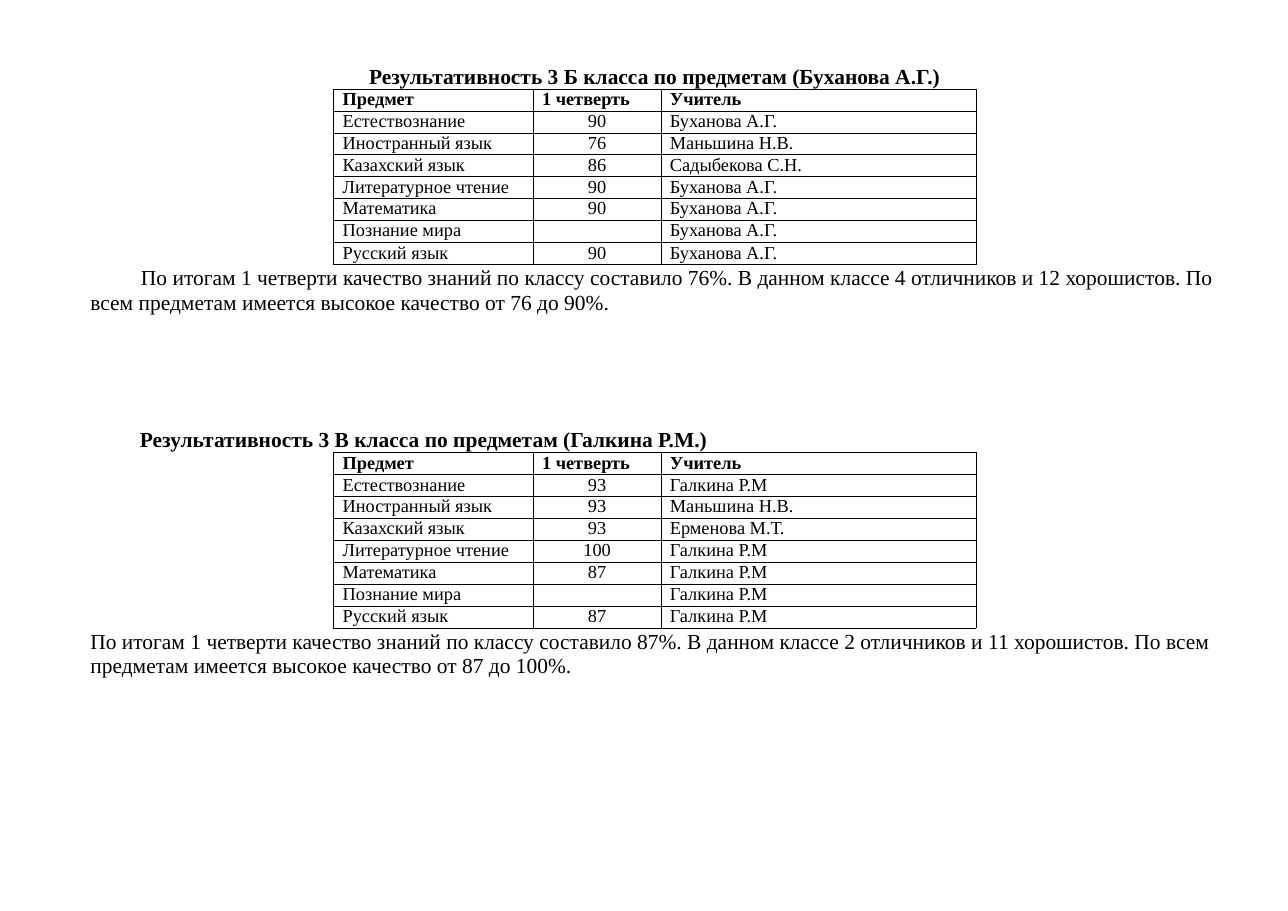
from dataclasses import dataclass

from lxml import etree
from pptx import Presentation
from pptx.dml.color import RGBColor
from pptx.enum.text import MSO_ANCHOR, MSO_AUTO_SIZE, PP_ALIGN
from pptx.oxml.ns import qn
from pptx.util import Inches, Pt

LEFT, CENTER = PP_ALIGN.LEFT, PP_ALIGN.CENTER
TOP, NO_FIT = MSO_ANCHOR.TOP, MSO_AUTO_SIZE.NONE
COLORS = {"text": "000000", "border": "000000", "page": "FFFFFF"}
FONT = "Times New Roman"
BODY_SIZE, TABLE_SIZE = 14, 12
TABLE_LEFT, TABLE_HEIGHT = 3.03, 1.59
COLUMN_WIDTHS = (1.81, 1.16, 2.86)
CELL_INDENT = 0.08
HEADERS = ("Предмет", "1 четверть", "Учитель")
SUBJECTS = ("Естествознание", "Иностранный язык", "Казахский язык",
            "Литературное чтение", "Математика", "Познание мира", "Русский язык")


@dataclass
class ClassReport:
    top: float
    heading: str
    heading_left: float
    scores: tuple[str, ...]
    class_teacher: str
    kazakh_teacher: str
    summary: str
    summary_width: float
    summary_indent: float

    def rows(self) -> list[tuple[str, str, str]]:
        teachers = [self.class_teacher] * len(SUBJECTS)
        teachers[1:3] = ["Маньшина Н.В.", self.kazakh_teacher]
        return [HEADERS, *zip(SUBJECTS, self.scores, teachers)]


REPORTS = (
    ClassReport(
        0.56, "Результативность 3 Б класса по предметам (Буханова А.Г.)", 3.34,
        ("90", "76", "86", "90", "90", "", "90"), "Буханова А.Г.", "Садыбекова С.Н.",
        "По итогам 1 четверти качество знаний по классу составило 76%. "
        "В данном классе 4 отличников и 12 хорошистов. По всем предметам "
        "имеется высокое качество от 76 до 90%.", 10.31, 0.46),
    ClassReport(
        3.86, "Результативность 3 В класса по предметам (Галкина Р.М.)", 1.26,
        ("93", "93", "93", "100", "87", "", "87"), "Галкина Р.М", "Ерменова М.Т.",
        "По итогам 1 четверти качество знаний по классу составило 87%. "
        "В данном классе 2 отличников и 11 хорошистов. По всем предметам "
        "имеется высокое качество от 87 до 100%.", 10.21, 0),
)


def place(sp, left: float, top: float, width: float, height: float) -> None:
    sp.left, sp.top = Inches(left), Inches(top)
    sp.width, sp.height = Inches(width), Inches(height)


def write(tf, text: str, size: float, bold: bool = False, align=LEFT,
          margin: float = 0, indent: float = 0, line: float | None = None,
          before: float = 0) -> None:
    p = tf.paragraphs[0]
    p.alignment = align
    p.space_before = Pt(before)
    if line:
        p.line_spacing = Pt(line)
    pPr = p._p.get_or_add_pPr()
    pPr.set("marL", str(Inches(margin)))
    pPr.set("indent", str(Inches(indent)))
    if not text:
        etree.SubElement(p._p, qn("a:endParaRPr"), sz=str(size * 100))
        return
    r = p.add_run()
    r.text = text
    r.font.name, r.font.size, r.font.bold = FONT, Pt(size), bold
    r.font.color.rgb = RGBColor.from_string(COLORS["text"])


def set_frame(tf, inset_top: float) -> None:
    tf.margin_left = tf.margin_right = tf.margin_bottom = 0
    tf.margin_top = Inches(inset_top)
    tf.word_wrap, tf.auto_size, tf.vertical_anchor = True, NO_FIT, TOP


def add_borders(cell) -> None:
    """Put the four border lines ahead of the fill, as the schema demands."""
    tcPr = cell._tc.get_or_add_tcPr()
    for i, side in enumerate(("a:lnL", "a:lnR", "a:lnT", "a:lnB")):
        ln = etree.Element(qn(side), w=str(Pt(0.5)))
        fill = etree.SubElement(ln, qn("a:solidFill"))
        etree.SubElement(fill, qn("a:srgbClr"), val=COLORS["border"])
        tcPr.insert(i, ln)


def add_scores(s, report: ClassReport) -> None:
    rows = report.rows()
    table = s.shapes.add_table(
        len(rows), len(COLUMN_WIDTHS), Inches(TABLE_LEFT), Inches(report.top + 0.25),
        Inches(sum(COLUMN_WIDTHS)), Inches(TABLE_HEIGHT)).table
    table.horz_banding = False
    for column, width in zip(table.columns, COLUMN_WIDTHS):
        column.width = Inches(width)
    for i, row in enumerate(rows):
        for j, text in enumerate(row):
            cell = table.cell(i, j)
            cell.margin_left = cell.margin_right = 0
            cell.margin_top = cell.margin_bottom = 0
            cell.fill.solid()
            cell.fill.fore_color.rgb = RGBColor.from_string(COLORS["page"])
            add_borders(cell)
            is_score = i > 0 and j == 1
            write(cell.text_frame, text, TABLE_SIZE, bold=i == 0,
                  align=CENTER if is_score else LEFT,
                  margin=0 if is_score else CELL_INDENT, line=13.4)


def add_report(s, report: ClassReport, heading) -> None:
    place(heading, report.heading_left, report.top, 5.25, 0.26)
    set_frame(heading.text_frame, 0.01)
    write(heading.text_frame, report.heading, BODY_SIZE, bold=True,
          margin=0.01, before=0.9)
    add_scores(s, report)
    summary = s.shapes.add_textbox(0, 0, 0, 0)
    place(summary, 0.81, report.top + 1.82, report.summary_width, 0.48)
    set_frame(summary.text_frame, 0.03)
    write(summary.text_frame, report.summary, BODY_SIZE, margin=0.01,
          indent=report.summary_indent, line=16.1, before=2)


def main() -> None:
    prs = Presentation()
    prs.slide_width, prs.slide_height = Inches(11.69), Inches(8.27)
    s = prs.slides.add_slide(prs.slide_layouts[5])
    first, second = REPORTS
    add_report(s, first, s.shapes.title)
    add_report(s, second, s.shapes.add_textbox(0, 0, 0, 0))
    prs.save("out.pptx")


if __name__ == "__main__":
    main()
